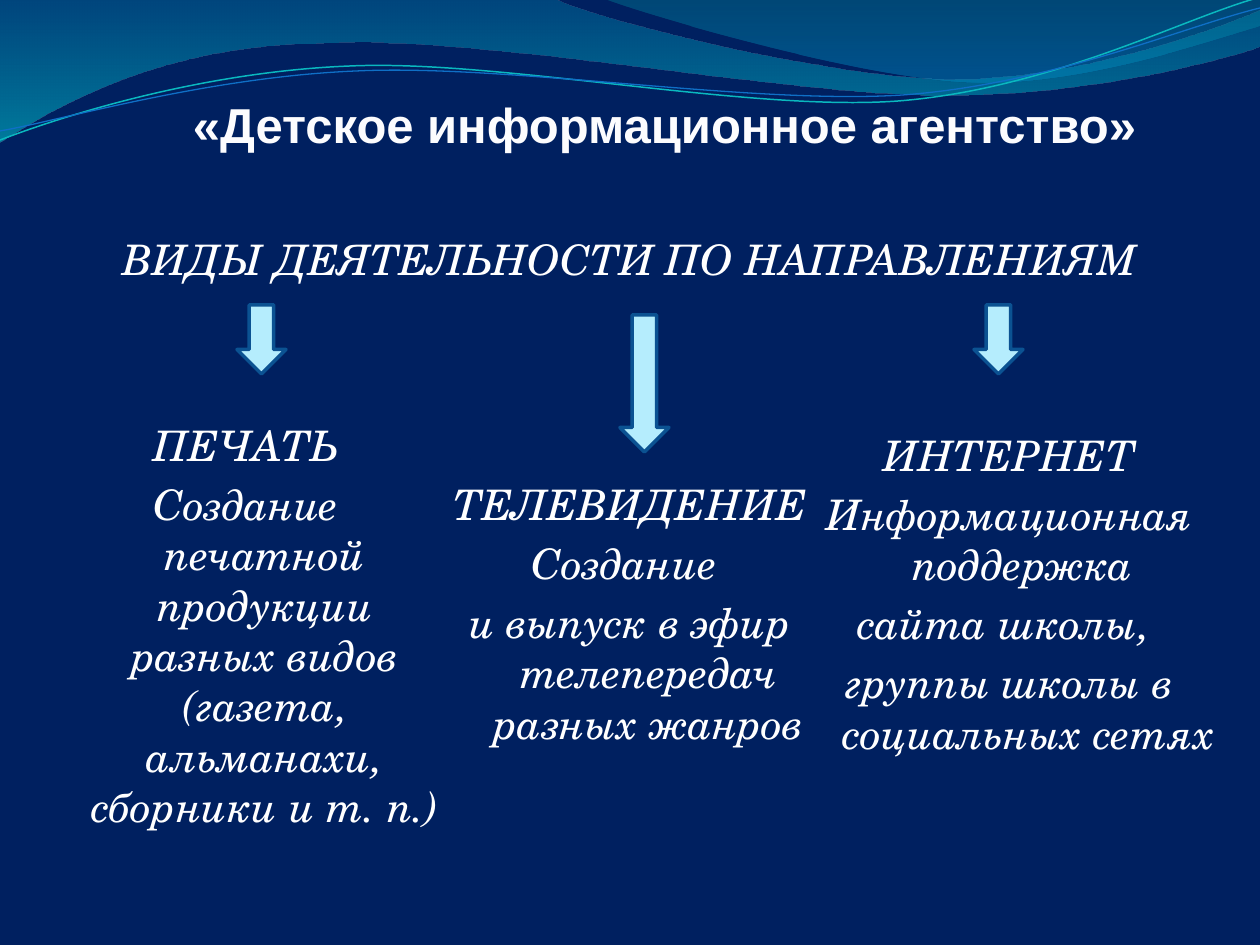
from lxml import etree
from pptx import Presentation
from pptx.dml.color import RGBColor
from pptx.enum.shapes import MSO_SHAPE
from pptx.enum.text import PP_ALIGN
from pptx.oxml.ns import qn
from pptx.util import Pt

CENTER = PP_ALIGN.CENTER
DOWN_ARROW = MSO_SHAPE.DOWN_ARROW
SERIF, SANS = "TeX Gyre Schola", "Arial"
W, H = 1260, 945
HANG = 38  # hanging indent of the columns

COLORS = {
    "bg": "002060", "text": "FFFFFF", "title": "FCFCFE",
    "arrow": "B5EDFD", "arrow_line": "0B5292",
    "wave_blue": "0074A1", "wave_cyan": "00C6CF",
    "crest_teal": "00A1A9", "crest_blue": "008BBF",
    "line_teal": "0AB8BF", "line_blue": "0F6FC6",
}


def px(n):
    return round(n * 914400 / 126)


def rgb(name):
    return RGBColor.from_string(COLORS[name])


def add_outline(s, box, start, segments, close):
    """Outline of segments: 2 numbers make a line, 6 a cubic curve."""
    x, y = box
    points = [start]
    for seg in segments:
        points += zip(seg[::2], seg[1::2])
    points = [(px(x + a), px(y + b)) for a, b in points]
    builder = s.shapes.build_freeform(*points[0], scale=1.0)
    builder.add_line_segments(points[1:], close=close)
    sp = builder.convert_to_shape()
    sp.shadow.inherit = False

    # Join the three points of each curve into one Bezier segment
    lines = iter(list(sp._element.spPr.iter(qn("a:lnTo"))))
    for seg in segments:
        parts = [next(lines) for _ in range(len(seg) // 2)]
        if len(parts) == 3:
            parts[0].addprevious(curve := etree.Element(qn("a:cubicBezTo")))
            for part in parts:
                curve.append(part[0])
                part.getparent().remove(part)
    return sp


def add_wave(s, box, start, segments, stops):
    sp = add_outline(s, box, start, segments, True)
    sp.line.fill.background()
    sp.fill.gradient()
    sp.fill.gradient_angle = 270
    for stop, (pos, color, alpha) in zip(sp.fill.gradient_stops, stops):
        stop.position = pos
        stop.color.rgb = rgb(color)
    # Transparency of each stop
    for clr, stop in zip(sp._element.spPr.iter(qn("a:srgbClr")), stops):
        etree.SubElement(clr, qn("a:alpha")).set("val", str(stop[2] * 1000))


def add_wave_line(s, box, start, segments, color, width):
    sp = add_outline(s, box, start, segments, False)
    sp.fill.background()
    sp.line.color.rgb = rgb(color)
    sp.line.width = Pt(width)


def add_header_waves(s, box):
    add_wave(s, box, (0, -1),
             [(554, -1), (600, 21, 837, 79, 955, 79), (1075, 79, 1207, 33, 1260, 11),
              (1261, 46), (1239, 55, 1096, 96, 940, 95), (784, 95, 481, 35, 324, 43),
              (163, 44, 58, 105, -1, 142)],
             [(0, "wave_blue", 45), (1, "wave_cyan", 55)])
    add_wave(s, box, (604, -1),
             [(641, 14, 859, 78, 969, 82), (1079, 87, 1211, 40, 1260, 26), (1260, 0)],
             [(0, "crest_teal", 30), (0.8, "crest_blue", 45)])
    add_wave_line(s, box, (0, 140),
                  [(60, 117, 199, 72, 349, 66), (498, 59, 747, 112, 898, 101),
                   (1050, 89, 1182, 19, 1257, -2)], "line_teal", 0.85)
    add_wave_line(s, box, (0, 131),
                  [(59, 121, 207, 77, 357, 71), (508, 64, 752, 105, 903, 95),
                   (1053, 84, 1186, 26, 1260, 8)], "line_blue", 0.75)


def add_text(s, box, lines, size, font, color, bold=False, italic=False, hang=0, before=0):
    tf = s.shapes.add_textbox(*map(px, box)).text_frame
    tf.word_wrap = True
    for i, line in enumerate(lines):
        p = tf.paragraphs[0] if i == 0 else tf.add_paragraph()
        p.text = line
        p.alignment = CENTER
        p.space_before = Pt(before)
        p.font.size, p.font.name = Pt(size), font
        p.font.bold, p.font.italic = bold, italic
        p.font.color.rgb = rgb(color)
        if hang:
            pPr = p._p.get_or_add_pPr()
            pPr.set("marL", str(px(hang)))
            pPr.set("indent", str(-px(hang)))


def add_arrow(s, box):
    sp = s.shapes.add_shape(DOWN_ARROW, *map(px, box))
    sp.shadow.inherit = False
    sp.fill.solid()
    sp.fill.fore_color.rgb = rgb("arrow")
    sp.line.color.rgb = rgb("arrow_line")
    sp.line.width = Pt(2)


def add_direction(s, box, arrow, lines):
    """A column of text with the arrow (dx, dy, height) that leads to it."""
    x, y = box[:2]
    dx, dy, height = arrow
    add_text(s, box, lines, 24, SERIF, "text", italic=True, hang=HANG, before=5)
    add_arrow(s, (x + dx, y + dy, 49, height))


DIRECTIONS = [
    ((39, 413, 414, 403), (198, -108, 69),
     ["ПЕЧАТЬ",
      "Создание печатной продукции разных видов (газета, альманахи, сборники и т. п.)"]),
    ((423, 472, 414, 571), (197, -157, 137),
     ["ТЕЛЕВИДЕНИЕ", "Создание ", "и выпуск в эфир телепередач разных жанров"]),
    ((759, 423, 501, 354), (215, -118, 69),
     ["ИНТЕРНЕТ", "Информационная поддержка ", "сайта школы, ",
      "группы школы в социальных сетях"]),
]


def main():
    prs = Presentation()
    prs.slide_width, prs.slide_height = px(W), px(H)
    s = prs.slides.add_slide(prs.slide_layouts[6])
    s.background.fill.solid()
    s.background.fill.fore_color.rgb = rgb("bg")

    # Decorative waves at the top
    add_header_waves(s, (0, 0))

    # Three directions of work
    for box, arrow, lines in DIRECTIONS:
        add_direction(s, box, arrow, lines)

    # Heading and title
    add_text(s, (0, 227, W, 63), ["ВИДЫ ДЕЯТЕЛЬНОСТИ ПО НАПРАВЛЕНИЯМ"],
             24, SERIF, "text", italic=True)
    add_text(s, (69, 88, 1191, 72), ["«Детское информационное агентство»"],
             28, SANS, "title", bold=True)

    prs.save("out.pptx")


if __name__ == "__main__":
    main()
